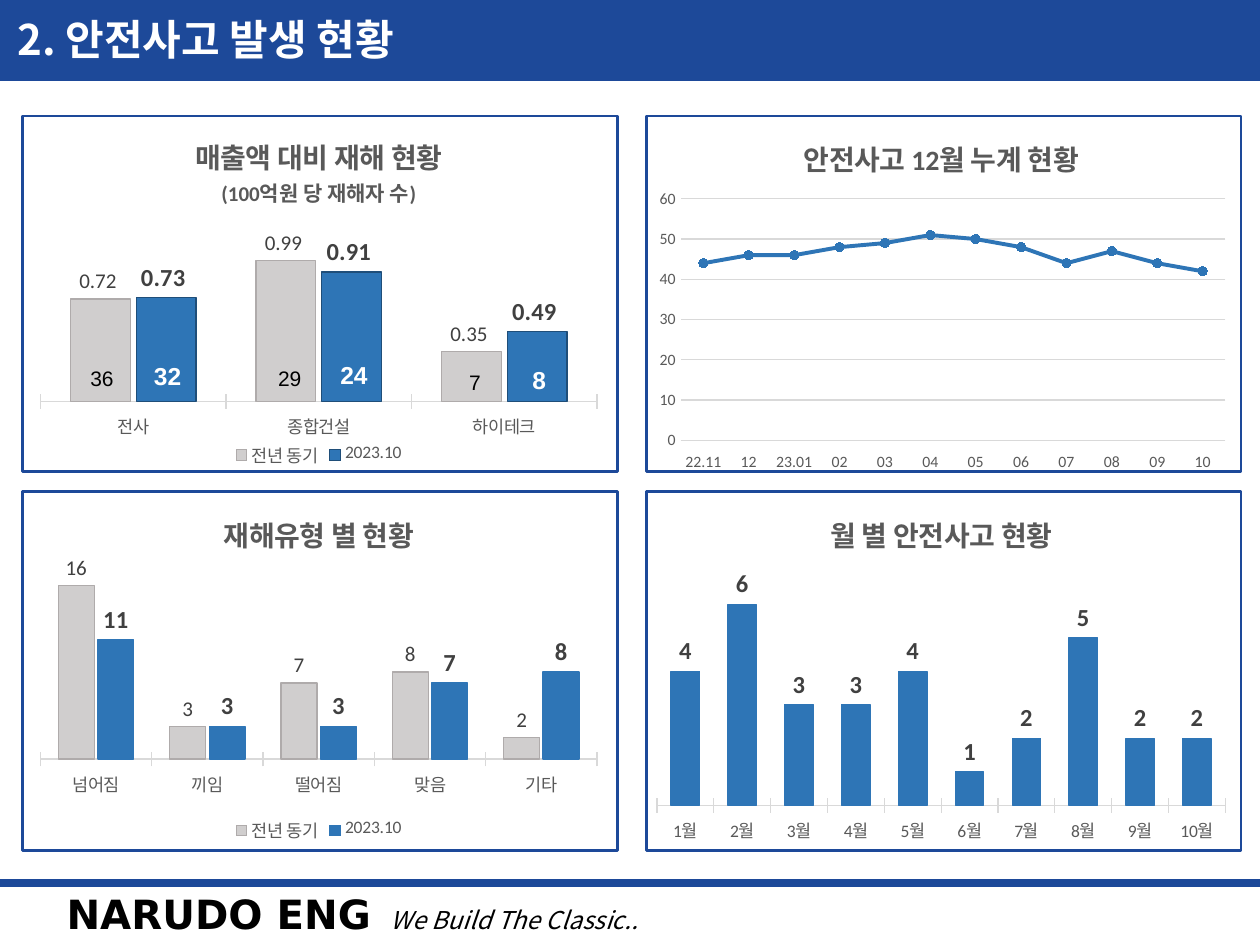
from pptx import Presentation
from pptx.chart.data import CategoryChartData
from pptx.dml.color import RGBColor
from pptx.enum.chart import XL_CHART_TYPE, XL_LABEL_POSITION, XL_LEGEND_POSITION, XL_MARKER_STYLE, XL_TICK_LABEL_POSITION, XL_TICK_MARK
from pptx.enum.shapes import MSO_CONNECTOR, MSO_SHAPE
from pptx.enum.text import MSO_ANCHOR, PP_ALIGN
from pptx.oxml import parse_xml
from pptx.oxml.ns import nsdecls, qn
from pptx.util import Inches, Pt

COLUMNS = XL_CHART_TYPE.COLUMN_CLUSTERED
LINE = XL_CHART_TYPE.LINE_MARKERS
OUTSIDE_END = XL_LABEL_POSITION.OUTSIDE_END
LEGEND_BOTTOM = XL_LEGEND_POSITION.BOTTOM
CIRCLE = XL_MARKER_STYLE.CIRCLE
LABELS_LOW = XL_TICK_LABEL_POSITION.LOW
TICK_CROSS, TICK_NONE = XL_TICK_MARK.CROSS, XL_TICK_MARK.NONE
STRAIGHT, RECTANGLE = MSO_CONNECTOR.STRAIGHT, MSO_SHAPE.RECTANGLE
MIDDLE = MSO_ANCHOR.MIDDLE
LEFT, CENTER = PP_ALIGN.LEFT, PP_ALIGN.CENTER

NAVY = RGBColor(0x1D, 0x49, 0x99)
BLUE = RGBColor(0x2E, 0x75, 0xB6)
DARK_BLUE = RGBColor(0x1F, 0x4E, 0x79)
SILVER = RGBColor(0xD0, 0xCE, 0xCE)
SILVER_EDGE = RGBColor(0xAF, 0xAB, 0xAB)
RULE_GRAY = RGBColor(0xD9, 0xD9, 0xD9)
TEXT_GRAY = RGBColor(0x59, 0x59, 0x59)
LABEL_GRAY = RGBColor(0x40, 0x40, 0x40)
BLACK = RGBColor(0, 0, 0)
WHITE = RGBColor(0xFF, 0xFF, 0xFF)

KOREAN_FONT = "Noto Sans CJK KR"
CHART_FONT = "Calibri"
PRIOR, CURRENT = "전년 동기", "2023.10"
PANEL_LEFTS, PANEL_TOPS, PANEL_HEIGHTS = (0.18, 5.13), (0.92, 3.9), (2.82, 2.85)
PANEL_WIDTH = 4.72


def set_font(font, size, color, name=CHART_FONT, bold=False, italic=False):
    """Apply size, colour, typeface and style to a font."""
    font.size, font.bold, font.italic = Pt(size), bold, italic
    font.color.rgb = color
    font.name = name


def add_run(paragraph, text, east_asian=KOREAN_FONT, **style):
    """Append formatted text to a paragraph."""
    run = paragraph.add_run()
    run.text = text
    set_font(run.font, **style)
    latin = run.font._element.find(qn("a:latin"))
    latin.addnext(parse_xml(f'<a:ea {nsdecls("a")} typeface="{east_asian}"/>'))


def add_text_box(slide, left, top, width, height):
    """Add an empty wrapping text box and return its first paragraph."""
    box = slide.shapes.add_textbox(Inches(left), Inches(top), Inches(width), Inches(height))
    box.text_frame.word_wrap = True
    return box.text_frame.paragraphs[0]


def add_rectangle(slide, left, top, width, height, line_width, fill=None):
    """Add a navy-edged rectangle, filled when a colour is given."""
    shape = slide.shapes.add_shape(RECTANGLE, Inches(left), Inches(top), Inches(width), Inches(height))
    shape.shadow.inherit = False
    if fill is None:
        shape.fill.background()
    else:
        shape.fill.solid()
        shape.fill.fore_color.rgb = fill
    shape.line.color.rgb, shape.line.width = NAVY, Pt(line_width)
    return shape


def add_header(slide, left, top, width, height):
    """Place the header band and the slide title on it."""
    title = slide.shapes.title
    band = add_rectangle(slide, left, top, width, height, 0.75, NAVY)
    title.element.addprevious(band.element)
    title.left, title.top = Inches(left + 0.04), Inches(top + 0.06)
    title.width, title.height = Inches(3.53), Inches(0.5)
    title.text_frame.word_wrap = False
    title.text_frame.vertical_anchor = MIDDLE
    paragraph = title.text_frame.paragraphs[0]
    paragraph.alignment = LEFT
    add_run(paragraph, "2. 안전사고 발생 현황", size=24, color=WHITE, name=KOREAN_FONT, bold=True)


def add_footer(slide, left, top, width, height):
    """Place the footer rule, the company name and its slogan."""
    rule = slide.shapes.add_connector(STRAIGHT, Inches(left), Inches(top), Inches(left + width), Inches(top))
    rule.line.color.rgb, rule.line.width = NAVY, Pt(4.5)
    rule.element.spPr.append(parse_xml(f'<a:effectLst {nsdecls("a")}/>'))
    paragraph = add_text_box(slide, left + 0.43, top + 0.07, 8.18, height - 0.08)
    paragraph.line_spacing = 0.8
    add_run(paragraph, "NARUDO ENG ", size=23, color=BLACK, name="DejaVu Sans", bold=True)
    add_run(paragraph, " We Build The Classic..", size=14, color=BLACK, name=KOREAN_FONT, italic=True)


def set_plot_box(chart, left, top, width, height):
    """Fix the inner plot area as fractions of the chart."""
    plot_area = chart.element.find(".//" + qn("c:plotArea"))
    for layout in plot_area.findall(qn("c:layout")):
        plot_area.remove(layout)
    places = "".join(f'<c:{tag} val="{value}"/>' for tag, value in
                     (("xMode", "edge"), ("yMode", "edge"), ("x", left), ("y", top), ("w", width), ("h", height)))
    plot_area.insert(0, parse_xml(
        f'<c:layout {nsdecls("c")}><c:manualLayout><c:layoutTarget val="inner"/>{places}</c:manualLayout></c:layout>'))


def add_chart(slide, left, top, kind, title_lines, categories, series, plot_box, maximum, axis_size):
    """Add a titled chart with its axes and return it."""
    data = CategoryChartData()
    data.categories = categories
    for name, values in series:
        data.add_series(name, values)
    chart = slide.shapes.add_chart(kind, Inches(left), Inches(top), Inches(4.7), Inches(2.82), data).chart
    set_font(chart.font, 10, BLACK)
    chart.has_legend = False
    chart.has_title = True
    frame = chart.chart_title.text_frame
    for index, (text, size) in enumerate(title_lines):
        paragraph = frame.add_paragraph() if index else frame.paragraphs[0]
        add_run(paragraph, text, size=size, color=TEXT_GRAY, name=CHART_FONT, bold=True)
    set_plot_box(chart, *plot_box)
    category_axis, value_axis = chart.category_axis, chart.value_axis
    set_font(category_axis.tick_labels.font, axis_size, TEXT_GRAY)
    category_axis.tick_label_position = LABELS_LOW
    category_axis.format.line.color.rgb, category_axis.format.line.width = RULE_GRAY, Pt(0.75)
    value_axis.minimum_scale, value_axis.maximum_scale = 0, maximum
    return chart


def add_column_panel(slide, left, top, series, overlap=-10, current_edge=BLUE, number_format="General", **parts):
    """Place a column chart with value labels, and a legend for two series."""
    chart = add_chart(slide, left, top, COLUMNS, series=series, axis_size=10, **parts)
    chart.category_axis.major_tick_mark = TICK_CROSS
    chart.value_axis.visible = False
    chart.value_axis.has_major_gridlines = False
    plot = chart.plots[0]
    plot.gap_width, plot.overlap, plot.vary_by_categories = 100, overlap, False
    for column in plot.series:
        is_prior = column.name == PRIOR
        column.format.fill.solid()
        column.format.fill.fore_color.rgb = SILVER if is_prior else BLUE
        column.format.line.color.rgb = SILVER_EDGE if is_prior else current_edge
        column.format.line.width = Pt(0.75)
        labels = column.data_labels
        labels.show_value, labels.position = True, OUTSIDE_END
        labels.number_format, labels.number_format_is_linked = number_format, False
        set_font(labels.font, 12 if is_prior else 14, LABEL_GRAY, bold=not is_prior)
    if len(series) > 1:
        chart.has_legend = True
        chart.legend.position, chart.legend.include_in_layout = LEGEND_BOTTOM, False
        set_font(chart.legend.font, 10, TEXT_GRAY)


def add_line_panel(slide, left, top, **parts):
    """Place the line chart of the rolling total."""
    chart = add_chart(slide, left, top, LINE, axis_size=9, **parts)
    chart.category_axis.major_tick_mark = TICK_NONE
    axis = chart.value_axis
    axis.major_tick_mark, axis.major_unit = TICK_NONE, 10
    axis.format.line.fill.background()
    axis.major_gridlines.format.line.color.rgb, axis.major_gridlines.format.line.width = RULE_GRAY, Pt(0.75)
    set_font(axis.tick_labels.font, 9, TEXT_GRAY)
    series = chart.plots[0].series[0]
    series.smooth = False
    series.format.line.color.rgb, series.format.line.width = BLUE, Pt(2.25)
    series.marker.style, series.marker.size = CIRCLE, 5
    series.marker.format.fill.solid()
    series.marker.format.fill.fore_color.rgb = BLUE
    series.marker.format.line.color.rgb = BLUE


def add_bar_counts(slide, left, top, counts, size, color, bold):
    """Place accident counts inside bars at offsets from the chart corner."""
    for text, offset_left, offset_top in counts:
        paragraph = add_text_box(slide, left + offset_left, top + offset_top, 0.5, 0.34 if bold else 0.31)
        paragraph.alignment = CENTER
        add_run(paragraph, text, size=size, color=color, name="Arial", bold=bold)


def main():
    """Build and save the safety accident slide."""
    presentation = Presentation()
    presentation.slide_width, presentation.slide_height = Inches(10), Inches(7.5)
    slide = presentation.slides.add_slide(presentation.slide_layouts[5])
    add_header(slide, 0, 0, 10, 0.64)
    add_footer(slide, 0, 7.01, 10, 0.49)
    for left in PANEL_LEFTS:
        for top, height in zip(PANEL_TOPS, PANEL_HEIGHTS):
            add_rectangle(slide, left, top, PANEL_WIDTH, height, 1.5)
    left, right = PANEL_LEFTS[0], PANEL_LEFTS[1] - 0.01
    upper, lower = (top + 0.01 for top in PANEL_TOPS)
    add_column_panel(
        slide, left, upper, title_lines=[("매출액 대비 재해 현황", 16), ("(100억원 당 재해자 수)", 12)],
        categories=["전사", "종합건설", "하이테크"],
        series=[(PRIOR, (0.72, 0.99, 0.35)), (CURRENT, (0.73, 0.91, 0.49))],
        plot_box=(0.03, 0.32, 0.94, 0.48), maximum=1.2, current_edge=DARK_BLUE, number_format="0.00_ ")
    add_bar_counts(slide, left, upper, [("36", 0.38, 1.92), ("29", 1.87, 1.92), ("7", 3.34, 1.95)], 12, BLACK, False)
    add_bar_counts(slide, left, upper, [("32", 0.9, 1.89), ("24", 2.38, 1.88), ("8", 3.85, 1.92)], 14, WHITE, True)
    add_line_panel(
        slide, right, upper, title_lines=[("안전사고 12월 누계 현황", 16)],
        categories=["22.11", "12", "23.01", "02", "03", "04", "05", "06", "07", "08", "09", "10"],
        series=[("누계", (44, 46, 46, 48, 49, 51, 50, 48, 44, 47, 44, 42))],
        plot_box=(0.06, 0.23, 0.92, 0.68), maximum=60)
    add_column_panel(
        slide, left, lower, title_lines=[("재해유형 별 현황", 16)],
        categories=["넘어짐", "끼임", "떨어짐", "맞음", "기타"],
        series=[(PRIOR, (16, 3, 7, 8, 2)), (CURRENT, (11, 3, 3, 7, 8))],
        plot_box=(0.03, 0.2, 0.94, 0.55), maximum=18)
    add_column_panel(
        slide, right, lower, title_lines=[("월 별 안전사고 현황", 16)],
        categories=[f"{month}월" for month in range(1, 11)],
        series=[("월 별", (4, 6, 3, 3, 4, 1, 2, 5, 2, 2))],
        plot_box=(0.02, 0.22, 0.96, 0.66), maximum=7, overlap=-27)
    presentation.save("out.pptx")


if __name__ == "__main__":
    main()
